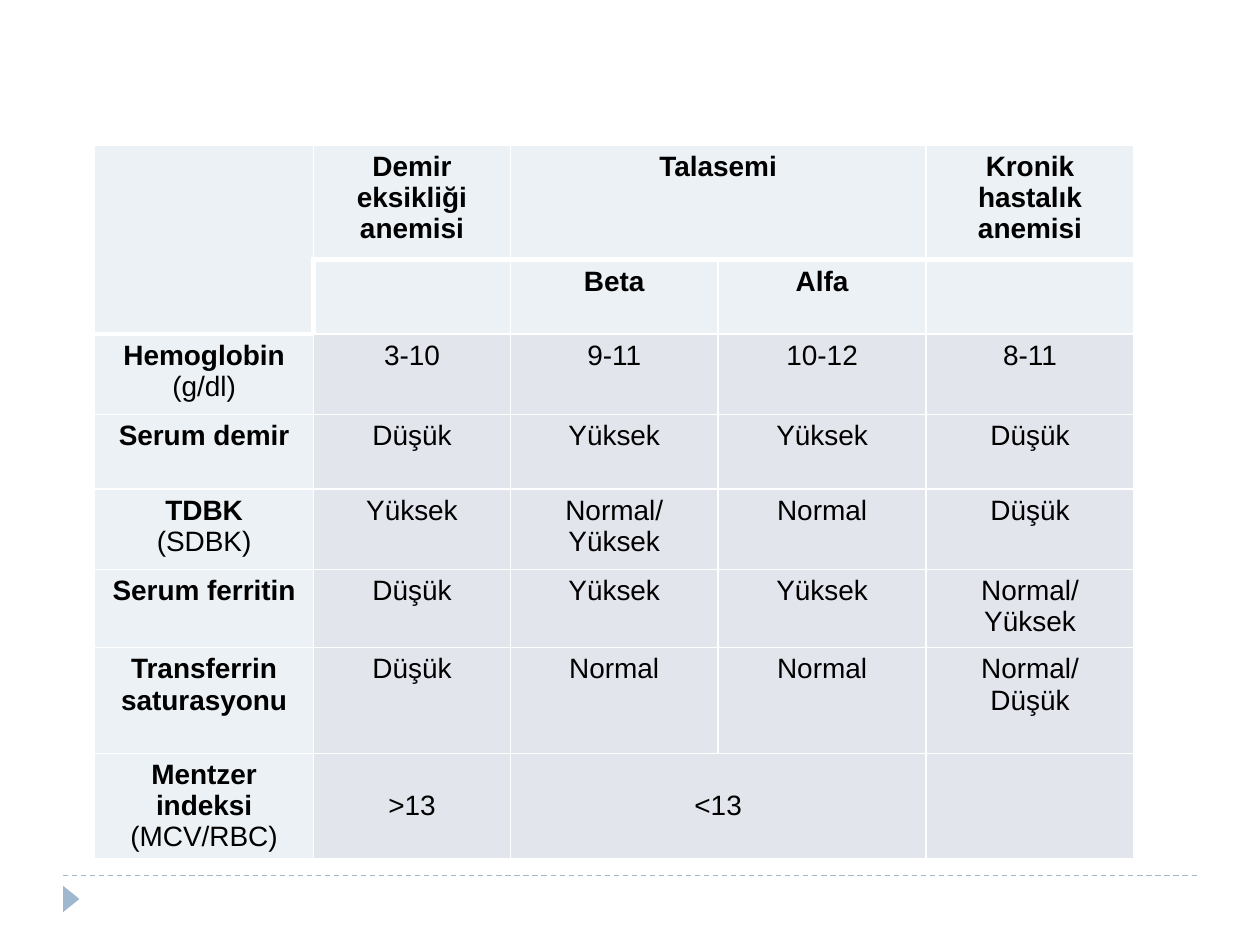
from dataclasses import dataclass

from lxml import etree
from pptx import Presentation, util as u
from pptx.dml.color import RGBColor
from pptx.enum import dml, shapes, text
from pptx.oxml.ns import qn


@dataclass(frozen=True)
class Theme:
    head: str = "ECF1F5"
    body: str = "E3E5ED"
    rule: str = "FFFFFF"
    mark: str = "9FB8CD"
    ink: str = "000000"
    font: str = "Arial"
    size: int = 16
    thin: int = 1
    thick: int = 3


@dataclass(frozen=True)
class Row:
    high: float
    name: str
    note: str
    vals: tuple[str, ...]
    head: bool = False


LOOK = Theme()
WIDE = (1.74, 1.56, 1.65, 1.65, 1.65)
ROWS = (
    Row(0.91, "", "", ("Demir eksikliği\nanemisi", "Talasemi", "",
                       "Kronik hastalık anemisi"), True),
    Row(0.59, "", "", ("", "Beta", "Alfa", ""), True),
    Row(0.64, "Hemoglobin ", "(g/dl)", ("3-10", "9-11", "10-12", "8-11")),
    Row(0.59, "Serum demir", "", ("Düşük", "Yüksek", "Yüksek", "Düşük")),
    Row(0.64, "TDBK\v", "(SDBK)", ("Yüksek", "Normal/ Yüksek", "Normal", "Düşük")),
    Row(0.62, "Serum ferritin", "", ("Düşük", "Yüksek", "Yüksek", "Normal/ Yüksek")),
    Row(0.84, "Transferrin saturasyonu", "",
        ("Düşük", "Normal", "Normal", "Normal/ Düşük")),
    Row(0.84, "Mentzer indeksi ", "(MCV/RBC)", (">13", "<13", "", "")),
)
LAST = len(ROWS) - 1
# First and last cell of each merged area
SPANS = (((0, 0), (1, 0)), ((0, 2), (0, 3)), ((LAST, 2), (LAST, 3)))
# Cell sides that carry the thick rule
BOLD = ({(0, c, "B") for c in range(5)} | {(1, c, "T") for c in range(1, 5)}
        | {(1, 0, "B"), (1, 0, "R"), (2, 0, "T"), (1, 1, "L")})


def tint(hue: str) -> RGBColor:
    return RGBColor.from_string(hue)


def write(cell, parts: tuple[tuple[str, bool], ...]) -> None:
    """Fill a cell with (words, bold) parts; a newline starts a paragraph."""
    para = cell.text_frame.paragraphs[0]
    for words, bold in parts:
        for i, line in enumerate(words.split("\n")):
            if i:
                para = cell.text_frame.add_paragraph()
            para.alignment = text.PP_ALIGN.CENTER
            if not line:
                continue
            run = para.add_run()
            run.text = line.rstrip("\v")
            form = {"name": LOOK.font, "size": u.Pt(LOOK.size), "bold": bold}
            for key, val in form.items():
                setattr(run.font, key, val)
            run.font.color.rgb = tint(LOOK.ink)
            if line.endswith("\v"):
                para.add_line_break()


def edge(cell, r: int, c: int) -> None:
    """Rule all four sides, ahead of the fill as the schema asks."""
    prop = cell._tc.get_or_add_tcPr()
    for i, side in enumerate("LRTB"):
        size = LOOK.thick if (r, c, side) in BOLD else LOOK.thin
        line = etree.Element(qn(f"a:ln{side}"), w=str(u.Pt(size)))
        fill = etree.SubElement(line, qn("a:solidFill"))
        etree.SubElement(fill, qn("a:srgbClr"), val=LOOK.rule)
        prop.insert(i, line)


def grid(slide) -> None:
    table = slide.shapes.add_table(
        len(ROWS), len(WIDE), u.Inches(0.75), u.Inches(1.15),
        u.Inches(sum(WIDE)), u.Inches(sum(row.high for row in ROWS))).table
    table.first_row = table.horz_banding = False
    for col, wide in zip(table.columns, WIDE):
        col.width = u.Inches(wide)
    for r, row in enumerate(ROWS):
        table.rows[r].height = u.Inches(row.high)
        for c in range(len(WIDE)):
            cell = table.cell(r, c)
            if c:
                write(cell, ((row.vals[c - 1], row.head),))
            else:
                write(cell, ((row.name, True), (row.note, False)))
            cell.fill.solid()
            cell.fill.fore_color.rgb = tint(
                LOOK.head if row.head or not c else LOOK.body)
            if c and r == LAST:
                cell.vertical_anchor = text.MSO_ANCHOR.MIDDLE
            edge(cell, r, c)
    for first, end in SPANS:
        table.cell(*first).merge(table.cell(*end))


def foot(slide) -> None:
    line = slide.shapes.add_connector(
        shapes.MSO_CONNECTOR.STRAIGHT, u.Inches(0.5), u.Inches(6.95),
        u.Inches(9.5), u.Inches(6.95))
    line.line.color.rgb = tint(LOOK.mark)
    line.line.width = u.Pt(0.75)
    line.line.dash_style = dml.MSO_LINE.DASH
    etree.SubElement(line._element.spPr, qn("a:effectLst"))

    mark = slide.shapes.add_shape(
        shapes.MSO_SHAPE.ISOSCELES_TRIANGLE, u.Inches(0.46), u.Inches(7.07),
        u.Inches(0.21), u.Inches(0.13))
    mark.rotation = 90
    mark.shadow.inherit = False
    mark.fill.solid()
    mark.fill.fore_color.rgb = tint(LOOK.mark)
    mark.line.fill.background()


def main() -> None:
    deck = Presentation()
    deck.slide_width, deck.slide_height = u.Inches(10), u.Inches(7.5)
    slide = deck.slides.add_slide(deck.slide_layouts[6])
    foot(slide)
    grid(slide)
    deck.save("out.pptx")


if __name__ == "__main__":
    main()
